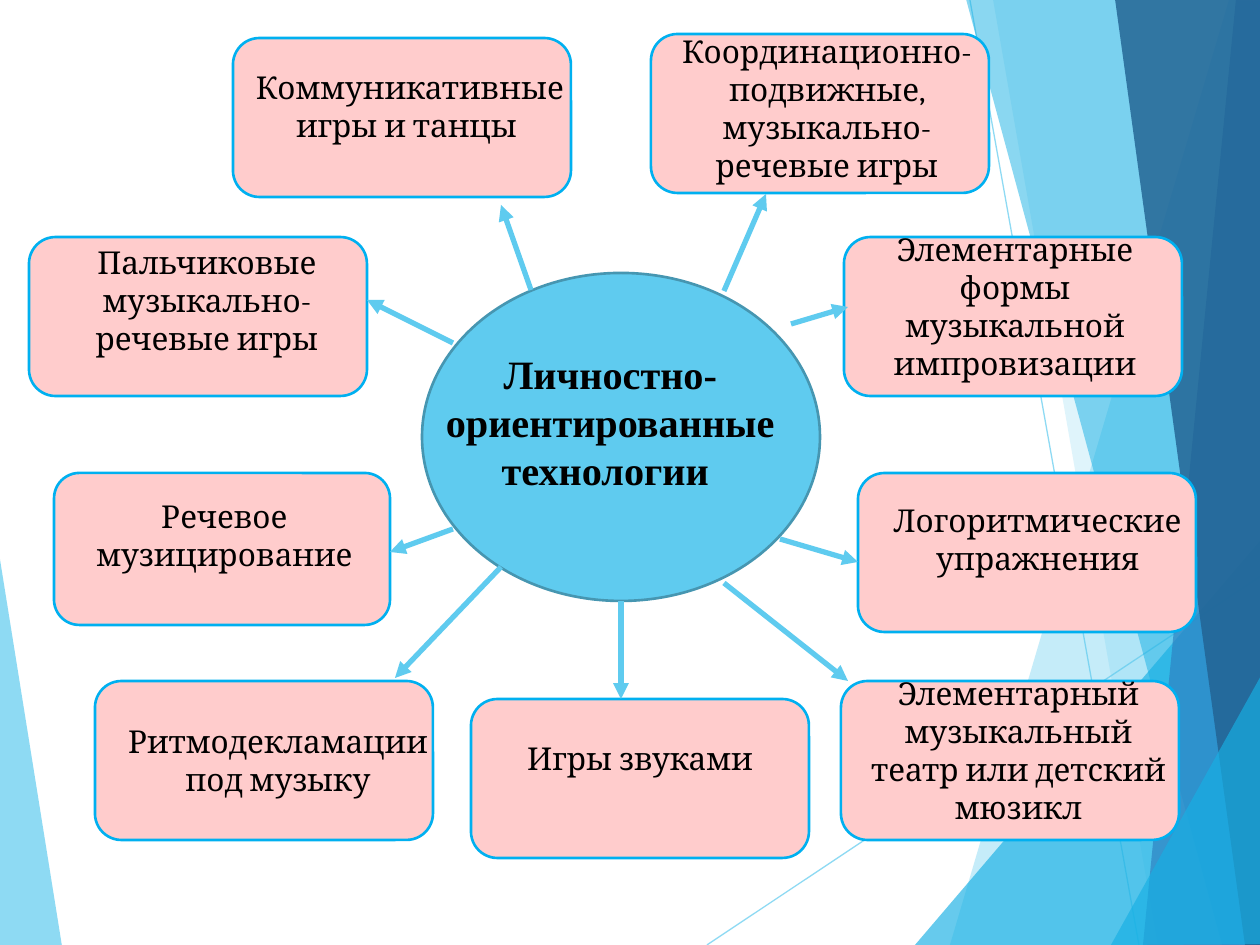
from dataclasses import dataclass

from lxml.etree import SubElement
from pptx import Presentation
from pptx.dml.color import RGBColor
from pptx.enum.shapes import MSO_CONNECTOR, MSO_SHAPE
from pptx.enum.text import PP_ALIGN
from pptx.oxml.ns import qn
from pptx.util import Emu, Pt

PX = 914400 // 126
WIDTH, HEIGHT = 1260, 945
BOX_WIDTH, BOX_HEIGHT = 338, 159


@dataclass(frozen=True)
class Theme:
    sky: str = "5FCBEF"
    azure: str = "17B0E4"
    blue: str = "2E83C3"
    navy: str = "226292"
    hub_line: str = "4696B1"
    card: str = "FFCCCC"
    card_line: str = "00B0F0"
    text: str = "000000"
    card_font: str = "Cambria"
    hub_font: str = "Times New Roman"
    card_size: int = 18
    hub_size: int = 23
    hairline: float = 0.75
    outline: float = 1.5
    arrow: int = 3


THEME = Theme()

# Outline, colour and opacity of each background facet, back to front
LEFT_FACET = ([(-1, 553), (62, 946), (-1, 945)], THEME.sky, 70)
RIGHT_FACETS = [
    ([(1229, 0), (950, 945), (1262, 946), (1261, 1)], THEME.sky, 36),
    ([(993, -1), (1158, 945), (1261, 945), (1261, -1)], THEME.sky, 20),
    ([(915, 945), (1260, 541), (1261, 945)], THEME.azure, 66),
    ([(966, -1), (1222, 945), (1261, 944), (1261, -1)], THEME.azure, 50),
    ([(1236, -1), (1143, 945), (1261, 945), (1260, -1)], THEME.blue, 70),
    ([(1115, -1), (1245, 945), (1262, 945), (1260, -1)], THEME.navy, 82),
    ([(1111, 945), (1262, 674), (1262, 944)], THEME.azure, 66),
]
BACKGROUND_LINES = [((707, 945), (1261, 576)), ((970, 0), (1139, 945))]

# Card box, label offset and width inside it, label
CARDS = [
    ((233, 38, BOX_WIDTH, BOX_HEIGHT), (8, 24, 338), "Коммуникативные игры и танцы "),
    ((651, 34, BOX_WIDTH, BOX_HEIGHT), (7, -8, 338),
     "Координационно-подвижные, музыкально-речевые игры"),
    ((29, 237, BOX_WIDTH, BOX_HEIGHT), (18, 0, 320), "Пальчиковые музыкально-речевые игры"),
    ((844, 237, BOX_WIDTH, BOX_HEIGHT), (4, -13, 334),
     "Элементарные формы музыкальной импровизации"),
    ((54, 473, 336, 152), (-7, 18, 355), "Речевое музицирование"),
    ((858, 473, BOX_WIDTH, BOX_HEIGHT), (-7, 22, 373), "Логоритмические упражнения"),
    ((95, 681, BOX_WIDTH, BOX_HEIGHT), (20, 35, 326), "Ритмодекламации под музыку"),
    ((471, 699, BOX_WIDTH, BOX_HEIGHT), (1, 34, 336), "Игры звуками"),
    ((841, 681, BOX_WIDTH, BOX_HEIGHT), (17, -13, 321),
     "Элементарный музыкальный театр или детский мюзикл"),
]
HUB = (422, 273, 398, 328)
ARROWS = [
    ((531, 290), (501, 205)),
    ((724, 291), (766, 194)),
    ((453, 343), (367, 300)),
    ((791, 324), (848, 307)),
    ((453, 529), (390, 552)),
    ((501, 567), (395, 678)),
    ((621, 601), (621, 699)),
    ((724, 583), (848, 681)),
    ((780, 539), (858, 562)),
]


def px(*lengths):
    return [Emu(length * PX) for length in lengths]


def set_opacity(fill_owner, percent):
    color = next(fill_owner._element.spPr.iter(qn("a:srgbClr")))
    SubElement(color, qn("a:alpha"), val=str(percent * 1000))


def add_line(slide, start, end, width):
    line = slide.shapes.add_connector(MSO_CONNECTOR.STRAIGHT, *px(*start, *end))
    line.line.color.rgb = RGBColor.from_string(THEME.sky)
    line.line.width = Pt(width)
    SubElement(line._element.spPr, qn("a:effectLst"))
    return line


def add_facet(slide, outline, color, opacity):
    builder = slide.shapes.build_freeform(*outline[0], scale=PX)
    builder.add_line_segments(outline[1:], close=True)
    facet = builder.convert_to_shape()
    facet.shadow.inherit = False
    facet.fill.solid()
    facet.fill.fore_color.rgb = RGBColor.from_string(color)
    facet.line.fill.background()
    set_opacity(facet, opacity)


def add_background(slide):
    add_facet(slide, *LEFT_FACET)
    for start, end in BACKGROUND_LINES:
        set_opacity(add_line(slide, start, end, THEME.hairline), 70)
    for facet in RIGHT_FACETS:
        add_facet(slide, *facet)


def add_panel(slide, preset, box, fill, outline):
    panel = slide.shapes.add_shape(preset, *px(*box))
    panel.shadow.inherit = False
    panel.fill.solid()
    panel.fill.fore_color.rgb = RGBColor.from_string(fill)
    panel.line.color.rgb = RGBColor.from_string(outline)
    panel.line.width = Pt(THEME.outline)


def add_label(slide, box, text, font_name, size, bold=False):
    frame = slide.shapes.add_textbox(*px(*box)).text_frame
    frame.word_wrap = True
    paragraph = frame.paragraphs[0]
    paragraph.text = text
    paragraph.alignment = PP_ALIGN.CENTER
    paragraph.font.name = font_name
    paragraph.font.size = Pt(size)
    paragraph.font.bold = bold
    paragraph.font.color.rgb = RGBColor.from_string(THEME.text)


def add_card(slide, box, label_place, label):
    left, top, _, height = box
    dx, dy, label_width = label_place
    add_panel(slide, MSO_SHAPE.ROUNDED_RECTANGLE, box, THEME.card, THEME.card_line)
    add_label(slide, (left + dx, top + dy, label_width, height - dy), label,
              THEME.card_font, THEME.card_size)


def add_hub(slide, box):
    left, top, _, _ = box
    add_panel(slide, MSO_SHAPE.OVAL, box, THEME.sky, THEME.hub_line)
    add_label(slide, (left + 11, top + 70, 355, 198),
              "Личностно-ориентированные технологии ",
              THEME.hub_font, THEME.hub_size, bold=True)


def add_arrow(slide, start, end):
    arrow = add_line(slide, start, end, THEME.arrow)
    SubElement(arrow.line._get_or_add_ln(), qn("a:tailEnd"), type="triangle")


def main():
    presentation = Presentation()
    presentation.slide_width, presentation.slide_height = px(WIDTH, HEIGHT)
    slide = presentation.slides.add_slide(presentation.slide_layouts[6])
    add_background(slide)
    add_hub(slide, HUB)
    for card in CARDS:
        add_card(slide, *card)
    for start, end in ARROWS:
        add_arrow(slide, start, end)
    presentation.save("out.pptx")


if __name__ == "__main__":
    main()
